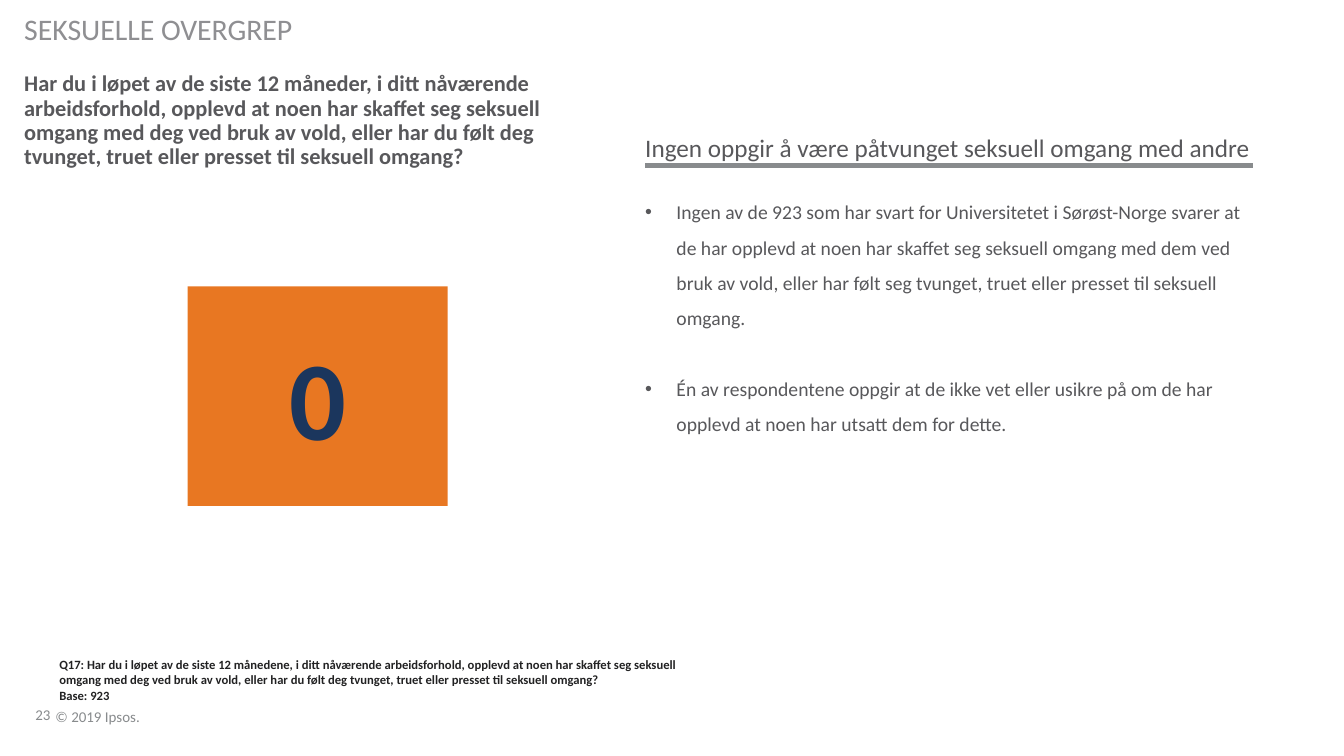
from pptx import Presentation
from pptx.dml.color import RGBColor as Rgb
from pptx.enum.shapes import MSO_CONNECTOR as Conn, MSO_SHAPE as Shape
from pptx.enum.text import MSO_ANCHOR as Anchor, PP_ALIGN as Align
from pptx.oxml.ns import qn
from pptx.util import Inches, Pt
from lxml.etree import SubElement as Sub

GREY, TEXT = "888B8D", "58585B"
ASK = ("opplevd at noen har skaffet seg seksuell omgang med deg ved bruk av vold, "
       "eller har du følt deg tvunget, truet eller presset til seksuell omgang?")
TITLE = "Har du i løpet av de siste 12 måneder, i ditt nåværende arbeidsforhold, " + ASK
NOTE = "Q17: Har du i løpet av de siste 12 månedene, i ditt nåværende arbeidsforhold, " + ASK
POINTS = [
    "Ingen av de 923 som har svart for Universitetet i Sørøst-Norge svarer at de har "
    "opplevd at noen har skaffet seg seksuell omgang med dem ved bruk av vold, eller har "
    "følt seg tvunget, truet eller presset til seksuell omgang.",
    "Én av respondentene oppgir at de ikke vet eller usikre på om de har opplevd at noen "
    "har utsatt dem for dette.",
]


def color(hex):
    """Turn a hex string into a colour."""
    return Rgb.from_string(hex)


def bullet(para, indent):
    """Give a paragraph a bullet with a hanging indent."""
    props = para._p.get_or_add_pPr()
    props.set("marL", str(Inches(indent)))
    props.set("indent", str(-Inches(indent)))
    Sub(props, qn("a:buFont")).set("typeface", "Arial")
    Sub(props, qn("a:buChar")).set("char", "•")


def text(slide, box, lines, size, hue, bold=False, anchor=Anchor.TOP, align=Align.LEFT,
         space=1, gap=0, inset=(0, 0), wrap=True, dots=False):
    """Add a text box with one paragraph per line."""
    frame = slide.shapes.add_textbox(*map(Inches, box)).text_frame
    frame.word_wrap = wrap
    frame.vertical_anchor = anchor
    frame.margin_left = frame.margin_right = Inches(inset[0])
    frame.margin_top = frame.margin_bottom = Inches(inset[1])
    for i, line in enumerate(lines):
        para = frame.add_paragraph() if i else frame.paragraphs[0]
        para.alignment = align
        para.line_spacing = space
        if i:
            para.space_before = Pt(gap)
        if dots:
            bullet(para, 0.31)
        run = para.add_run()
        run.text = line
        font = run.font
        font.name, font.size, font.bold = "Calibri", Pt(size), bold
        font.color.rgb = color(hue)


def block(slide, box, hue):
    """Add a plain filled rectangle."""
    shape = slide.shapes.add_shape(Shape.RECTANGLE, *map(Inches, box))
    shape.shadow.inherit = False
    shape.fill.solid()
    shape.fill.fore_color.rgb = color(hue)
    shape.line.fill.background()


def rule(slide, left, right, top, hue, width):
    """Add a level line."""
    ends = map(Inches, (left, top, right, top))
    line = slide.shapes.add_connector(Conn.STRAIGHT, *ends)
    line.line.color.rgb = color(hue)
    line.line.width = Pt(width)
    Sub(line._element.spPr, qn("a:effectLst"))


def main():
    """Build the slide and save it."""
    deck = Presentation()
    deck.slide_width, deck.slide_height = Inches(13.33), Inches(7.5)
    slide = deck.slides.add_slide(deck.slide_layouts[6])
    foot = dict(size=10.7, hue=GREY, anchor=Anchor.BOTTOM, space=0.85, wrap=False)
    text(slide, (0.35, 6.83, 0.45, 0.35), ["23"], **foot)
    text(slide, (0.55, 6.95, 1.01, 0.25), ["© 2019 Ipsos."], **foot)
    block(slide, (1.86, 2.84, 2.58, 2.18), "E87722")
    text(slide, (0.24, 0.07, 9.81, 0.47), ["SEKSUELLE OVERGREP"], 21.3, "8F8F92",
         anchor=Anchor.MIDDLE, space=0.9)
    text(slide, (0.24, 0.72, 5.87, 0.97), [TITLE], 16, TEXT, bold=True, space=0.9)
    text(slide, (0.49, 6.47, 6.67, 0.56), [NOTE, "Base: 923"], 9, "222223", bold=True,
         inset=(0.1, 0.05))
    text(slide, (6.4, 1.87, 6.04, 4.32), POINTS, 14, TEXT, space=1.5, gap=25.5, dots=True)
    text(slide, (6.4, 1.31, 6.03, 0.37),
         ["Ingen oppgir å være påtvunget seksuell omgang med andre"], 18, TEXT)
    rule(slide, 6.4, 12.43, 1.64, GREY, 3.5)
    text(slide, (2.27, 3.26, 1.77, 1.35), ["0"], 80, "1B365D", bold=True, align=Align.CENTER)
    deck.save("out.pptx")


if __name__ == "__main__":
    main()
